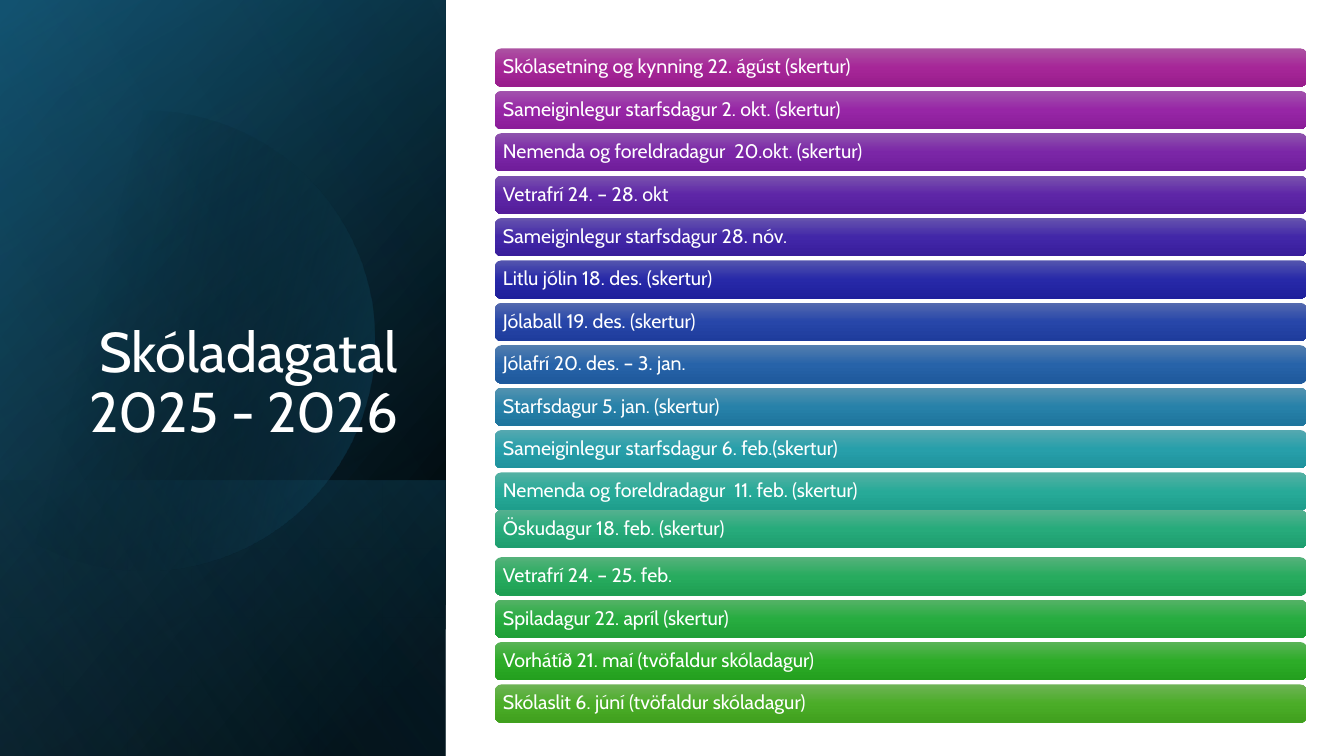
import colorsys
import math

import lxml.etree
import pptx
import pptx.dml.color
import pptx.enum.shapes
import pptx.enum.text
import pptx.oxml.ns
import pptx.util

Inches, Pt = pptx.util.Inches, pptx.util.Pt
qn = pptx.oxml.ns.qn
SHAPE = pptx.enum.shapes.MSO_SHAPE
ANCHOR = pptx.enum.text.MSO_ANCHOR
ALIGN = pptx.enum.text.PP_ALIGN

SLIDE_W, SLIDE_H = 13.33, 7.5
COLORS = {
    "black": "000000",
    "white": "FFFFFF",
    "deep": "104862",
    "teal": "156082",
    "sky": "46B1E1",
}
FONT = "Cabin"
TITLE = "Skóladagatal 2025 - 2026"
EVENTS = [
    "Skólasetning og kynning 22. ágúst (skertur)",
    "Sameiginlegur starfsdagur 2. okt. (skertur)",
    "Nemenda og foreldradagur  20.okt. (skertur)",
    "Vetrafrí 24. – 28. okt",
    "Sameiginlegur starfsdagur 28. nóv.",
    "Litlu jólin 18. des. (skertur)",
    "Jólaball 19. des. (skertur)",
    "Jólafrí 20. des. – 3. jan.",
    "Starfsdagur 5. jan. (skertur)",
    "Sameiginlegur starfsdagur 6. feb.(skertur)",
    "Nemenda og foreldradagur  11. feb. (skertur)",
    "Öskudagur 18. feb. (skertur)",
    "Vetrafrí 24. – 25. feb.",
    "Spiladagur 22. apríl (skertur)",
    "Vorhátíð 21. maí (tvöfaldur skóladagur)",
    "Skólaslit 6. júní (tvöfaldur skóladagur)",
]
RAISED = {"Öskudagur 18. feb. (skertur)": 0.05}


def paint(shape, stops, angle):
    """Fill with (position %, hex, opacity %) stops and drop line and shadow."""
    shape.shadow.inherit = False
    shape.line.fill.background()
    shape.fill.background()
    grad = lxml.etree.Element(qn("a:gradFill"), rotWithShape="1")
    gs_list = lxml.etree.SubElement(grad, qn("a:gsLst"))
    for pos, color, opacity in stops:
        gs = lxml.etree.SubElement(gs_list, qn("a:gs"), pos=str(pos * 1000))
        clr = lxml.etree.SubElement(gs, qn("a:srgbClr"), val=color)
        if opacity < 100:
            lxml.etree.SubElement(clr, qn("a:alpha"), val=str(opacity * 1000))
    lxml.etree.SubElement(grad, qn("a:lin"), ang=str(angle * 60000), scaled="0")
    sp_pr = shape.element.spPr
    sp_pr.replace(sp_pr.find(qn("a:noFill")), grad)


def format_text(tf, size, align, anchor):
    tf.word_wrap = True
    tf.auto_size = pptx.enum.text.MSO_AUTO_SIZE.NONE
    tf.vertical_anchor = anchor
    p = tf.paragraphs[0]
    p.alignment = align
    p.line_spacing = 0.9
    font = p.runs[0].font
    font.size, font.name = Pt(size), FONT
    font.color.rgb = pptx.dml.color.RGBColor.from_string(COLORS["white"])


def add_turned_panel(s, x, y, w, h, stops, angle):
    """Cover the box with a mirrored rectangle turned by a quarter."""
    left, top = x + (w - h) / 2, y + (h - w) / 2
    sp = s.shapes.add_shape(
        SHAPE.RECTANGLE, Inches(left), Inches(top), Inches(h), Inches(w))
    sp.rotation = 90
    sp.element.spPr.find(qn("a:xfrm")).set("flipH", "1")
    paint(sp, stops, angle)


def add_disc(s, x, y, w, h):
    """Draw a large faint disc cut off by the left edge of the box."""
    cx, cy, radius = x + 0.325 * w, y + 0.45 * h, 0.304 * h
    limit = math.degrees(math.acos((x - cx) / radius))
    angles = [math.radians(limit * i / 60) for i in range(-60, 61)]
    points = [(Inches(cx + radius * math.cos(a)), Inches(cy + radius * math.sin(a)))
              for a in angles]
    builder = s.shapes.build_freeform(*points[0])
    builder.add_line_segments(points[1:], close=True)
    paint(builder.convert_to_shape(),
          [(29, COLORS["black"], 0), (100, COLORS["teal"], 43)], 14)


def add_title_panel(s, x, y, w, h):
    black, teal = COLORS["black"], COLORS["teal"]
    foot = 0.365 * h
    add_turned_panel(s, x, y, w, h, [(8, black, 100), (100, COLORS["deep"], 100)], 50)
    add_turned_panel(s, x, y, w, h, [(0, black, 0), (99, teal, 46)], 30)
    add_turned_panel(s, x, y + h - foot, w, foot, [(2, teal, 29), (100, black, 30)], 130)
    add_disc(s, x, y, w, h)
    add_turned_panel(s, x, y, w, h, [(0, black, 0), (99, COLORS["sky"], 11)], 120)

    title = s.shapes.title
    title.left, title.top = Inches(x + 0.145 * w), Inches(y + 0.245 * h)
    title.width, title.height = Inches(0.77 * w), Inches(0.35 * h)
    title.text_frame.text = TITLE
    format_text(title.text_frame, 40, ALIGN.RIGHT, ANCHOR.BOTTOM)
    title.element.getparent().append(title.element)


def bar_stops(share):
    """Shade a bar by its share of the way from magenta to green."""
    hue = (306.5 - 202.3 * share) / 360
    stops = []
    for pos, saturation, value in ((0, 0.52, 0.675), (50, 0.77, 0.65), (100, 0.81, 0.6)):
        rgb = colorsys.hsv_to_rgb(hue, saturation, value + 0.027 * share)
        stops.append((pos, "".join(f"{round(c * 255):02X}" for c in rgb), 100))
    return stops


def add_event_bars(s, x, y, w, h):
    bar_h = 0.38
    last = len(EVENTS) - 1
    for i, event in enumerate(EVENTS):
        top = y + (h - bar_h) * i / last - RAISED.get(event, 0)
        bar = s.shapes.add_shape(
            SHAPE.ROUNDED_RECTANGLE, Inches(x), Inches(top), Inches(w), Inches(bar_h))
        paint(bar, bar_stops(i / last), 90)
        tf = bar.text_frame
        tf.text = event
        tf.margin_left = tf.margin_right = Inches(0.06)
        tf.margin_top = tf.margin_bottom = Inches(0.06)
        format_text(tf, 14, ALIGN.LEFT, ANCHOR.MIDDLE)


def main():
    prs = pptx.Presentation()
    prs.slide_width, prs.slide_height = Inches(SLIDE_W), Inches(SLIDE_H)
    s = prs.slides.add_slide(prs.slide_layouts.get_by_name("Title Only"))
    add_title_panel(s, 0, 0, 4.42, SLIDE_H)
    add_event_bars(s, 4.91, 0.48, 8.05, 6.69)
    prs.save("out.pptx")


if __name__ == "__main__":
    main()
